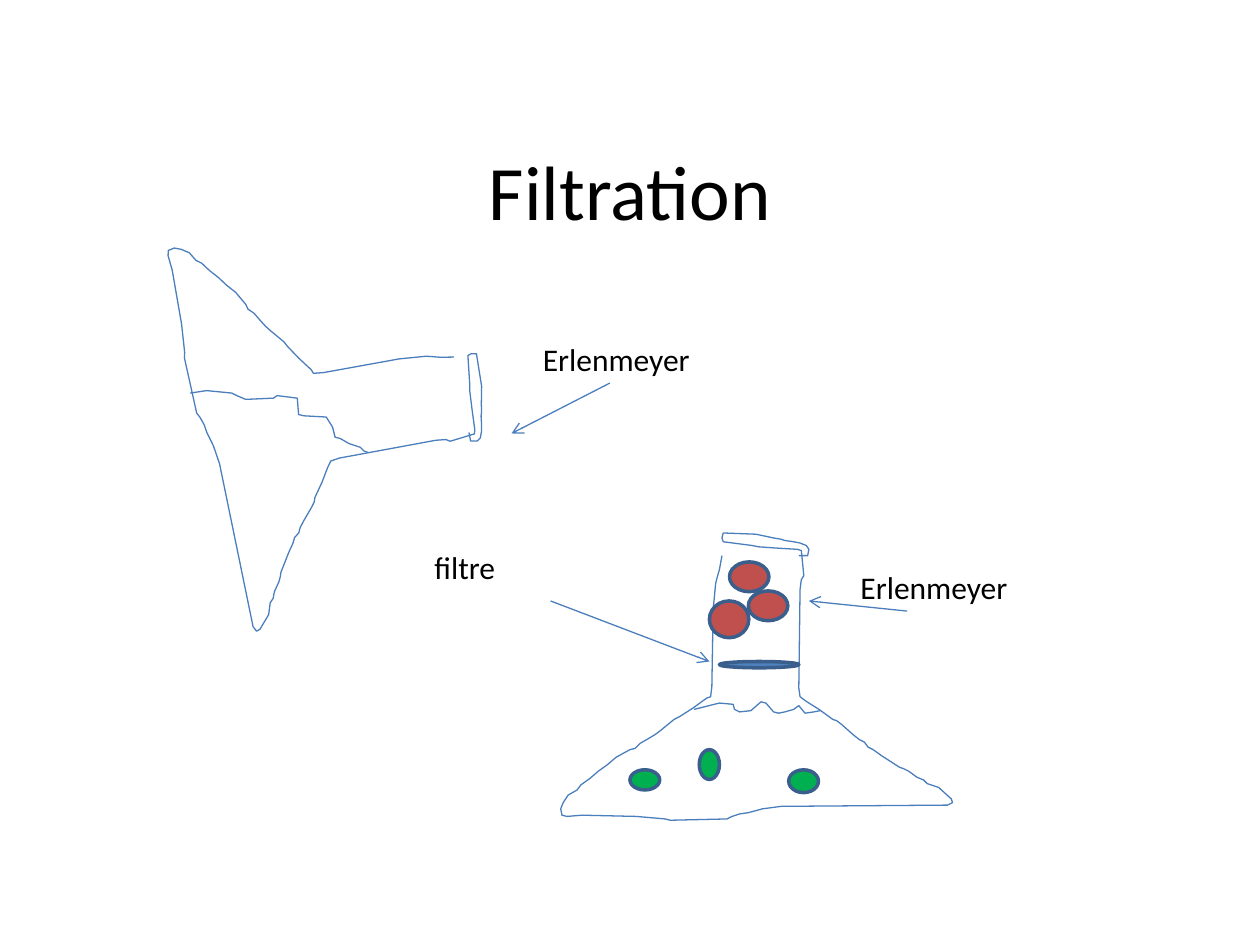
from dataclasses import dataclass

from lxml.etree import SubElement
from pptx import Presentation
from pptx.dml.color import RGBColor
from pptx.enum.shapes import MSO_CONNECTOR, MSO_SHAPE
from pptx.enum.text import MSO_ANCHOR, PP_ALIGN
from pptx.oxml.ns import qn
from pptx.util import Pt


@dataclass(frozen=True)
class Theme:
    font: str = "Calibri"
    title_size: float = 44
    label_size: float = 18
    ink: RGBColor = RGBColor(0x00, 0x00, 0x00)
    outline: RGBColor = RGBColor(0x4B, 0x7E, 0xBC)
    rim: RGBColor = RGBColor(0x3A, 0x5F, 0x8C)
    residue: RGBColor = RGBColor(0xC0, 0x50, 0x4D)
    filtrate: RGBColor = RGBColor(0x00, 0xB0, 0x50)
    filter: RGBColor = RGBColor(0x4F, 0x81, 0xBD)
    thin: float = 0.75
    thick: float = 2


THEME = Theme()
UNIT = Pt(0.72)  # drawing unit of the hand-drawn outlines

# Hand-drawn outlines, in drawing units from the slide's top left corner
FLASK = [
    # left neck and shoulder
    (573, 441), (571, 452), (569, 459), (568, 463), (566, 484), (565, 545),
    (564, 553), (561, 554), (550, 562), (539, 569), (535, 571), (524, 580),
    (520, 583), (515, 586), (508, 590), (504, 594), (500, 595), (489, 601),
    (482, 607), (475, 612), (468, 618), (461, 623), (458, 627), (451, 631),
    # base
    (447, 637), (445, 642), (446, 647), (450, 648), (462, 647), (505, 648),
    (528, 650), (532, 651), (577, 650), (581, 648), (587, 646), (594, 645),
    (605, 642), (620, 640), (752, 639), (756, 637), (755, 634), (745, 625),
    # right shoulder and neck
    (736, 622), (733, 619), (728, 617), (721, 612), (717, 610), (714, 609),
    (700, 600), (693, 595), (689, 593), (686, 589), (682, 587), (677, 583),
    (668, 575), (664, 572), (661, 571), (650, 563), (642, 558), (639, 556),
    (635, 553), (634, 546), (635, 468), (636, 460), (638, 457), (636, 437),
    # lip
    (633, 436), (616, 435), (602, 434), (597, 433), (574, 430), (573, 427),
    (574, 423), (600, 424), (614, 427), (620, 428), (623, 429), (630, 430),
    (635, 431), (640, 433), (642, 436), (641, 441), (634, 441),
]
TILTED_LIQUID = [
    (151, 312), (164, 310), (184, 312), (188, 314), (195, 317), (217, 316),
    (220, 314), (236, 316), (237, 329), (241, 330), (259, 331), (264, 339),
    (266, 347), (270, 348), (277, 352), (286, 355), (289, 358), (292, 359),
]
UPRIGHT_LIQUID = [
    (551, 563), (567, 559), (571, 558), (582, 559), (583, 563), (587, 565),
    (596, 564), (604, 557), (608, 558), (614, 565), (618, 566), (623, 565),
    (630, 563), (634, 560), (639, 566), (646, 565), (651, 564),
]

# Ellipses in points: left, top, width, height
RESIDUE_GRAINS = [(405.4, 343.4, 22.5, 21), (427.7, 337.7, 22.5, 17), (416.9, 321.1, 22.5, 17)]
FILTRATE_GRAINS = [(360, 439.9, 17, 11.5), (399.6, 428.4, 11.5, 17), (450.7, 439.9, 17, 13)]
FILTER_DISC = (411.1, 378, 45.4, 3.6)

# Label text, its box, and its arrow from start to tip
LABELS = [
    ("Erlenmeyer", (484.6, 321.1, 102.2, 28.8), (518.4, 349.2, 462.2, 343.4)),
    ("Erlenmeyer", (303.1, 190.8, 102.2, 28.8), (348.5, 218.9, 292.3, 247.7)),
    ("filtre", (241.2, 309.6, 90.7, 28.8), (314.6, 343.4, 405.4, 378)),
]


def add_sketch(slide, points):
    builder = slide.shapes.build_freeform(*points[0], scale=UNIT)
    builder.add_line_segments(points[1:], close=False)
    sketch = builder.convert_to_shape()
    sketch.shadow.inherit = False
    sketch.fill.background()
    sketch.line.color.rgb = THEME.outline
    sketch.line.width = Pt(THEME.thin)
    return sketch


def add_ellipse(slide, box, color):
    ellipse = slide.shapes.add_shape(MSO_SHAPE.OVAL, *map(Pt, box))
    ellipse.shadow.inherit = False
    ellipse.fill.solid()
    ellipse.fill.fore_color.rgb = color
    ellipse.line.color.rgb = THEME.rim
    ellipse.line.width = Pt(THEME.thick)


def add_text(slide, text, box, size, align=PP_ALIGN.LEFT, anchor=MSO_ANCHOR.TOP):
    frame = slide.shapes.add_textbox(*map(Pt, box)).text_frame
    frame.word_wrap = True
    frame.vertical_anchor = anchor
    paragraph = frame.paragraphs[0]
    paragraph.text = text
    paragraph.alignment = align
    paragraph.font.name = THEME.font
    paragraph.font.size = Pt(size)
    paragraph.font.color.rgb = THEME.ink


def add_arrow(slide, ends):
    arrow = slide.shapes.add_connector(MSO_CONNECTOR.STRAIGHT, *map(Pt, ends))
    arrow.line.color.rgb = THEME.outline
    arrow.line.width = Pt(THEME.thin)
    SubElement(arrow.line._get_or_add_ln(), qn("a:tailEnd"), type="arrow")
    SubElement(arrow._element.spPr, qn("a:effectLst"))


def main():
    deck = Presentation()
    deck.slide_width, deck.slide_height = Pt(720), Pt(540)
    slide = deck.slides.add_slide(deck.slide_layouts[6])

    add_text(slide, "Filtration", (54, 43.2, 612, 130.3), THEME.title_size,
             PP_ALIGN.CENTER, MSO_ANCHOR.MIDDLE)

    # The same flask, tilted and upright, each with its liquid
    tilted_flask = add_sketch(slide, FLASK)
    tilted_flask.left, tilted_flask.top = Pt(83.5), Pt(154.8)
    tilted_flask.rotation = 78.8
    add_sketch(slide, FLASK)
    add_sketch(slide, TILTED_LIQUID)
    add_sketch(slide, UPRIGHT_LIQUID)

    # Grains above and below the filter
    for grain in RESIDUE_GRAINS:
        add_ellipse(slide, grain, THEME.residue)
    for grain in FILTRATE_GRAINS:
        add_ellipse(slide, grain, THEME.filtrate)
    add_ellipse(slide, FILTER_DISC, THEME.filter)

    # Labels with their arrows
    for text, box, ends in LABELS:
        add_text(slide, text, box, THEME.label_size)
        add_arrow(slide, ends)

    deck.save("out.pptx")


if __name__ == "__main__":
    main()
